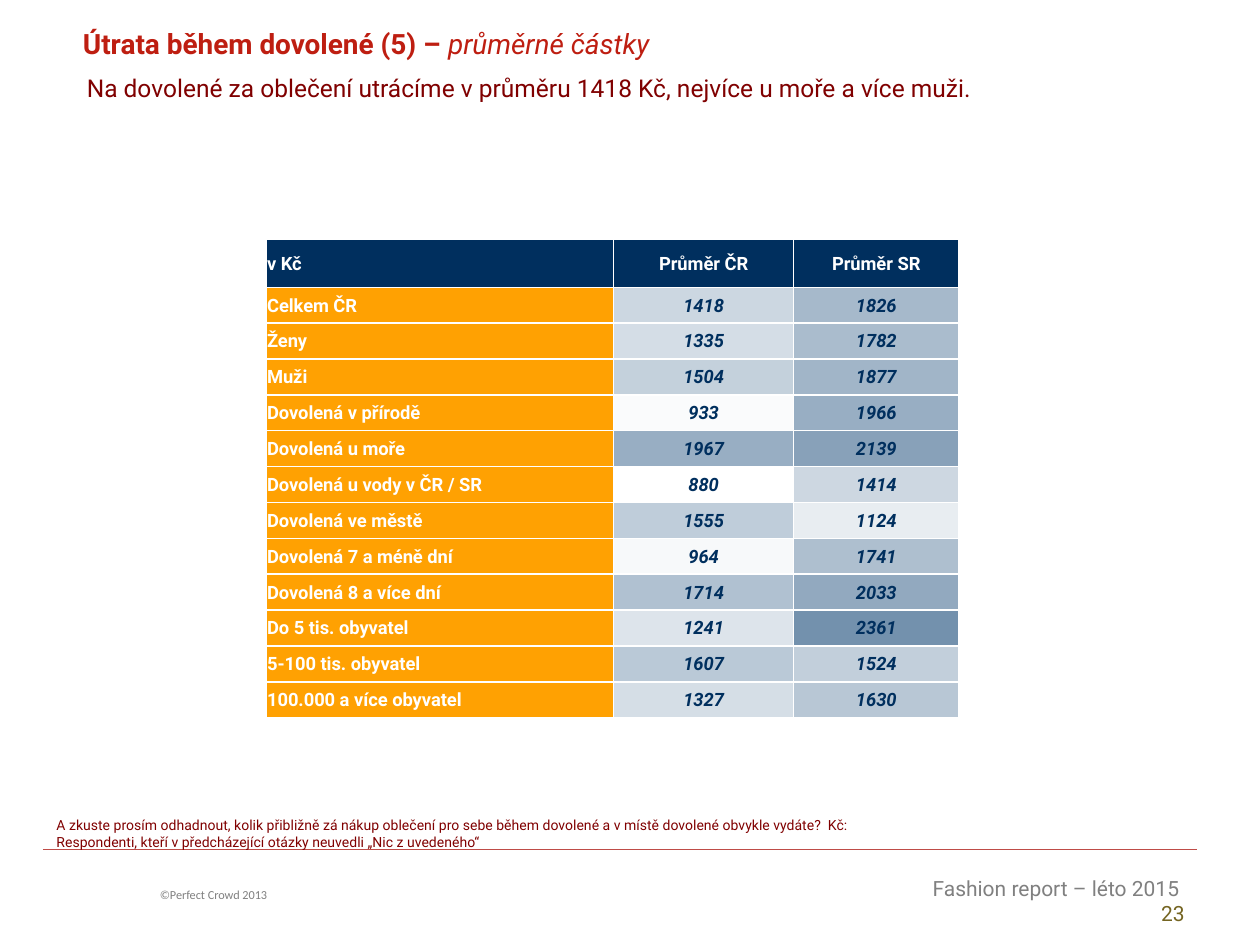
from lxml import etree
from pptx import Presentation
from pptx.dml.color import RGBColor
from pptx.enum import shapes, text
from pptx.oxml import ns
from pptx.util import Inches, Pt

NAVY, ORANGE, WHITE, MAROON, RED, GREY = "002F5E", "FFA102", "FFFFFF", "800000", "BE1E11", "808080"
LEFT, RIGHT, CENTER, JUSTIFY = (
    text.PP_ALIGN.LEFT, text.PP_ALIGN.RIGHT, text.PP_ALIGN.CENTER, text.PP_ALIGN.JUSTIFY)

TEXTS = [
    ((1.17, 6.99, 2.91, 0.22), LEFT, 7, "Calibri", [
        [("©Perfect Crowd 2013", GREY, False, False)]]),
    ((5.79, 6.9, 3.71, 0.5), RIGHT, 12, "Roboto", [
        [("Fashion report – léto 2015 \v", GREY, False, False), ("23", "756522", False, False)]]),
    ((0.56, 0.16, 7.51, 0.37), LEFT, 16, "Roboto", [
        [("Útrata během dovolené (5) – ", RED, True, False), ("průměrné částky", RED, False, True)]]),
    ((0.35, 6.43, 9.06, 0.37), LEFT, 8, "Roboto", [
        [("A zkuste prosím odhadnout, kolik přibližně zá nákup oblečení pro sebe během dovolené "
          "a v místě dovolené obvykle vydáte?  Kč:", MAROON, False, False)],
        [("Respondenti, kteří v předcházející otázky neuvedli „Nic z uvedeného“", MAROON, False, False)]]),
    ((0.59, 0.53, 8.98, 0.81), JUSTIFY, 14, "Roboto", [
        [("Na dovolené za oblečení utrácíme v průměru 1418 Kč, nejvíce u moře a více muži.",
          MAROON, False, False)]]),
]

HEADER = ("v Kč", "Průměr ČR", "Průměr SR")
SPENDING = [
    ("Celkem ČR", 1418, 1826),
    ("Ženy", 1335, 1782),
    ("Muži", 1504, 1877),
    ("Dovolená v přírodě", 933, 1966),
    ("Dovolená u moře", 1967, 2139),
    ("Dovolená u vody v ČR / SR", 880, 1414),
    ("Dovolená ve městě", 1555, 1124),
    ("Dovolená 7 a méně dní", 964, 1741),
    ("Dovolená 8 a více dní", 1714, 2033),
    ("Do 5 tis. obyvatel", 1241, 2361),
    ("5-100 tis. obyvatel", 1607, 1524),
    ("100.000 a více obyvatel", 1327, 1630),
]
COLUMN_WIDTHS = (2.76, 1.43, 1.31)
TABLE_HEIGHT, HEADER_HEIGHT = 3.8, 0.38
DEEPEST = (0x73, 0x91, 0xAD)


def color(value):
    return RGBColor.from_string(value)


def style(font, name, size, fill, bold, italic):
    font.name, font.size, font.bold, font.italic = name, Pt(size), bold, italic
    font.color.rgb = color(fill)


def add_text(page, place, align, size, name, paragraphs):
    box = page.shapes.add_textbox(*map(Inches, place))
    frame = box.text_frame
    frame.word_wrap = True
    frame.text = "\n".join("".join(part[0] for part in parts) if len(parts) == 1 else ""
                           for parts in paragraphs)
    for para, parts in zip(frame.paragraphs, paragraphs):
        para.alignment = align
        if len(parts) > 1:
            for words, *_ in parts:
                line, *rest = words.split("\v")
                para.add_run().text = line
                if rest:
                    para.add_line_break()
        for span, (_, fill, bold, italic) in zip(para.runs, parts):
            style(span.font, name, size, fill, bold, italic)


def shade(value):
    amounts = [amount for row in SPENDING for amount in row[1:]]
    low, high = min(amounts), max(amounts)
    share = (value - low) / (high - low)
    return "".join(f"{round(255 - (255 - channel) * share):02X}" for channel in DEEPEST)


def add_borders(cell):
    properties = cell._tc.get_or_add_tcPr()
    for position, side in enumerate(("lnL", "lnR", "lnT", "lnB")):
        line = etree.Element(ns.qn("a:" + side), w=str(Pt(1)))
        fill = etree.SubElement(line, ns.qn("a:solidFill"))
        etree.SubElement(fill, ns.qn("a:srgbClr"), val=WHITE)
        properties.insert(position, line)


def fill_cell(cell, value, fill, ink, align, italic):
    cell.text = str(value)
    cell.vertical_anchor = text.MSO_ANCHOR.MIDDLE
    cell.margin_left = cell.margin_top = cell.margin_right = Inches(0.01)
    cell.margin_bottom = 0
    cell.fill.solid()
    cell.fill.fore_color.rgb = color(fill)
    para = cell.text_frame.paragraphs[0]
    para.alignment = align
    style(para.runs[0].font, "Roboto", 10.5, ink, True, italic)
    add_borders(cell)


def add_spending_table(page):
    rows = [HEADER] + SPENDING
    frame = page.shapes.add_table(len(rows), len(HEADER), Inches(2.11), Inches(1.9),
                                  Inches(sum(COLUMN_WIDTHS)), Inches(TABLE_HEIGHT))
    table = frame.table
    for column, width in zip(table.columns, COLUMN_WIDTHS):
        column.width = Inches(width)
    row_height = (TABLE_HEIGHT - HEADER_HEIGHT) / len(SPENDING)
    for r, values in enumerate(rows):
        table.rows[r].height = Inches(row_height if r else HEADER_HEIGHT)
        for c, value in enumerate(values):
            is_amount = r > 0 and c > 0
            fill = NAVY if r == 0 else shade(value) if is_amount else ORANGE
            fill_cell(table.cell(r, c), value, fill, NAVY if is_amount else WHITE,
                      CENTER if c else LEFT, is_amount)


def add_footer_rule(page):
    rule = page.shapes.add_connector(shapes.MSO_CONNECTOR.STRAIGHT,
                                     Inches(0.34), Inches(6.74), Inches(9.5), Inches(6.74))
    rule.line.color.rgb = color("BF4C48")
    rule.line.width = Pt(0.75)
    etree.SubElement(rule._element.spPr, ns.qn("a:effectLst"))


def main():
    deck = Presentation()
    deck.slide_width, deck.slide_height = Inches(10), Inches(7.5)
    page = deck.slides.add_slide(deck.slide_layouts[6])
    add_footer_rule(page)
    for item in TEXTS:
        add_text(page, *item)
    add_spending_table(page)
    deck.save("out.pptx")


if __name__ == "__main__":
    main()
